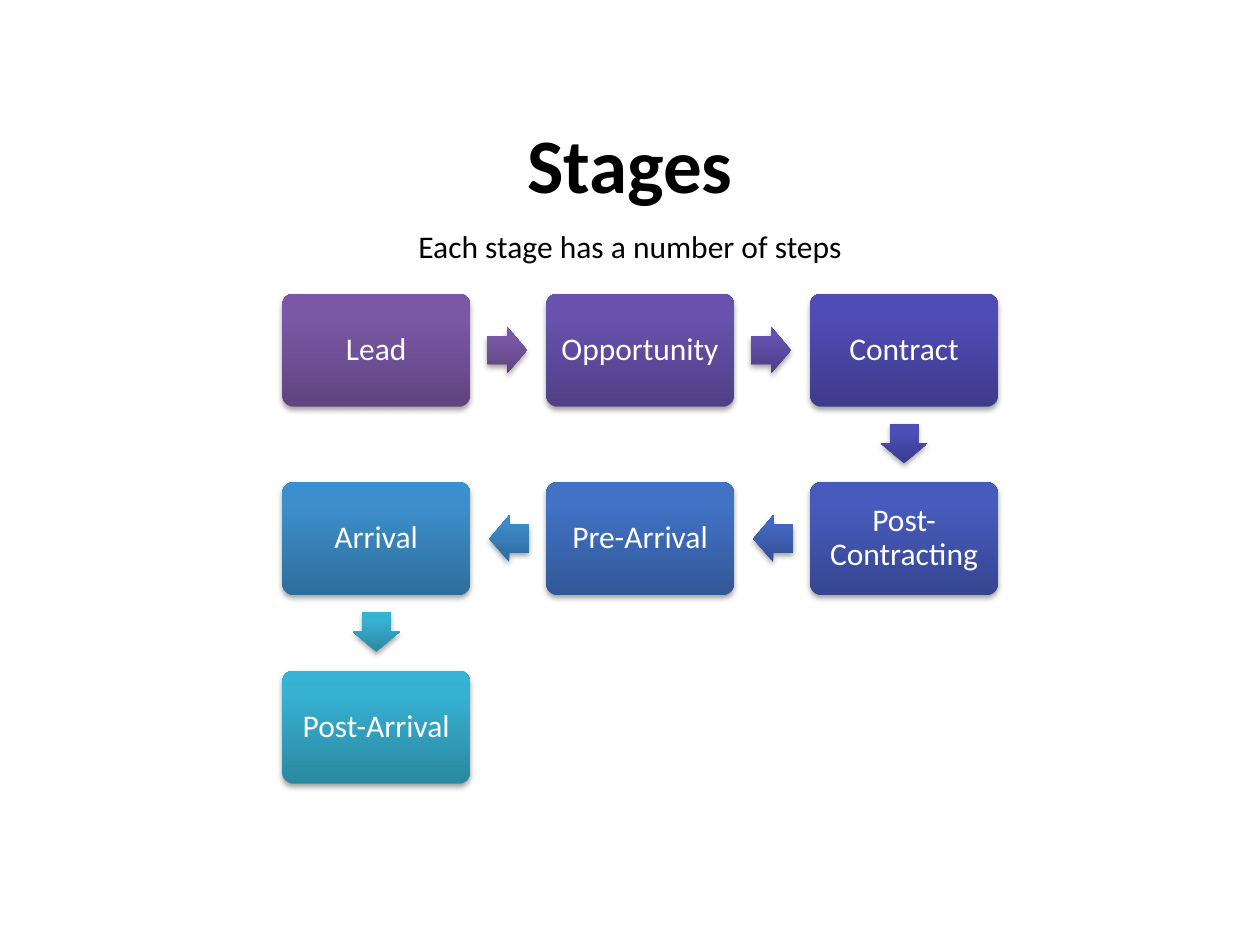
from copy import deepcopy
from dataclasses import dataclass
from math import atan2, cos, degrees, sin

from lxml.etree import SubElement
from pptx import Presentation
from pptx.dml.color import RGBColor
from pptx.enum.shapes import MSO_SHAPE as Preset
from pptx.enum.text import MSO_ANCHOR as Anchor, PP_ALIGN as Align
from pptx.oxml.ns import qn
from pptx.shapes.autoshape import Shape
from pptx.shapes.shapetree import SlideShapes
from pptx.text.text import TextFrame
from pptx.util import Cm, Pt

COLORS = {"text": "000000", "label": "FFFFFF", "shadow": "000000"}
GRADIENTS = {
    "purple": ("5F4480", "7B58A6", "7C57A8"),
    "violet": ("503F86", "6852AE", "6851B0"),
    "violet_indigo": ("4D3E87", "6451AF", "6450B2"),
    "indigo": ("3E3B8B", "504CB5", "4F4BB8"),
    "indigo_blue": ("393D8E", "4A4FB8", "484EBB"),
    "royal": ("374691", "475BBC", "455ABF"),
    "royal_blue": ("345094", "4468C1", "4168C4"),
    "blue": ("325897", "4172C4", "3F72C7"),
    "blue_sky": ("2F699B", "3D89C9", "3B8ACD"),
    "sky": ("2E6E9C", "3C8FCB", "3A90CE"),
    "teal": ("2A88A2", "37B1D2", "34B4D6"),
}
STOPS = (0, 0.8, 1)
COLUMNS = 3
GRID_LEFT, GRID_TOP = 5.69, 5.92
PITCH_X, PITCH_Y = 5.32, 3.8
BOX_W, BOX_H = 3.79, 2.28
ARROW_W, ARROW_H = 0.8, 0.94
ARROW_SETBACK = 0.02


@dataclass(frozen=True)
class Stage:
    label: str
    box_gradient: str
    arrow_gradient: str = ""


STAGES = (
    Stage("Lead", "purple", "purple"),
    Stage("Opportunity", "violet", "violet_indigo"),
    Stage("Contract", "indigo", "indigo_blue"),
    Stage("Post-Contracting", "royal", "royal_blue"),
    Stage("Pre-Arrival", "blue", "blue_sky"),
    Stage("Arrival", "sky", "teal"),
    Stage("Post-Arrival", "teal"),
)


def write_text(frame: TextFrame, text: str, size: int, color: str,
               anchor: Anchor, bold: bool = False, spacing: float = 1.0) -> None:
    frame.text = text
    paragraph = frame.paragraphs[0]
    formats = {
        frame: {"word_wrap": True, "vertical_anchor": anchor},
        paragraph: {"alignment": Align.CENTER, "line_spacing": spacing},
        paragraph.runs[0].font: {"name": "Calibri", "size": Pt(size), "bold": bold},
    }
    for target, values in formats.items():
        for attribute, value in values.items():
            setattr(target, attribute, value)
    paragraph.runs[0].font.color.rgb = RGBColor.from_string(COLORS[color])


def add_heading(shapes: SlideShapes, text: str, top: float, height: float,
                size: int, anchor: Anchor, bold: bool = False) -> None:
    heading = shapes.add_textbox(Cm(1.27), Cm(top), Cm(22.86), Cm(height))
    write_text(heading.text_frame, text, size, "text", anchor, bold)


def shade(shape: Shape, gradient: str) -> None:
    shape.line.fill.background()
    shape.fill.gradient()
    shape.fill.gradient_angle = 90
    properties = shape.element.spPr
    gradient_fill = properties.find(qn("a:gradFill"))
    gradient_fill.set("rotWithShape", "0")
    stop_list = gradient_fill.find(qn("a:gsLst"))
    stop_list.insert(1, deepcopy(stop_list[0]))
    for stop, position, color in zip(shape.fill.gradient_stops, STOPS, GRADIENTS[gradient]):
        stop.position = position
        stop.color.rgb = RGBColor.from_string(color)

    shape.shadow.inherit = False
    shadow = SubElement(properties.find(qn("a:effectLst")), qn("a:outerShdw"),
                        blurRad="40000", dist="23000", dir="5400000", rotWithShape="0")
    shadow_color = SubElement(shadow, qn("a:srgbClr"), val=COLORS["shadow"])
    SubElement(shadow_color, qn("a:alpha"), val="35000")


def stage_center(index: int) -> tuple[float, float]:
    row, step = divmod(index, COLUMNS)
    column = COLUMNS - 1 - step if row % 2 else step
    return (GRID_LEFT + column * PITCH_X + BOX_W / 2,
            GRID_TOP + row * PITCH_Y + BOX_H / 2)


def add_centered(shapes: SlideShapes, preset: Preset, x: float, y: float,
                 width: float, height: float, gradient: str) -> Shape:
    shape = shapes.add_shape(preset, Cm(x - width / 2), Cm(y - height / 2),
                             Cm(width), Cm(height))
    shade(shape, gradient)
    return shape


def add_stage(shapes: SlideShapes, index: int, stage: Stage) -> None:
    x, y = stage_center(index)
    box = add_centered(shapes, Preset.ROUNDED_RECTANGLE, x, y, BOX_W, BOX_H,
                       stage.box_gradient)
    box.adjustments[0] = 0.1
    for side in ("left", "right", "top", "bottom"):
        setattr(box.text_frame, f"margin_{side}", Cm(0.1))
    write_text(box.text_frame, stage.label, 18, "label", Anchor.MIDDLE, spacing=0.9)


def add_arrow(shapes: SlideShapes, index: int, gradient: str) -> None:
    x, y = stage_center(index)
    next_x, next_y = stage_center(index + 1)
    heading = atan2(next_y - y, next_x - x)
    arrow = add_centered(shapes, Preset.RIGHT_ARROW,
                         (x + next_x) / 2 - ARROW_SETBACK * cos(heading),
                         (y + next_y) / 2 - ARROW_SETBACK * sin(heading),
                         ARROW_W, ARROW_H, gradient)
    arrow.rotation = round(degrees(heading))
    arrow.adjustments[0] = 0.6
    arrow.adjustments[1] = 0.5


def main() -> None:
    deck = Presentation()
    deck.slide_width, deck.slide_height = Cm(25.4), Cm(19.05)
    shapes = deck.slides.add_slide(deck.slide_layouts[6]).shapes

    add_heading(shapes, "Each stage has a number of steps", 4.45, 1.07, 18, Anchor.TOP)
    add_heading(shapes, "Stages", 1.7, 3.18, 44, Anchor.MIDDLE, bold=True)
    for index, stage in enumerate(STAGES):
        add_stage(shapes, index, stage)
        if stage.arrow_gradient:
            add_arrow(shapes, index, stage.arrow_gradient)

    deck.save("out.pptx")


if __name__ == "__main__":
    main()
